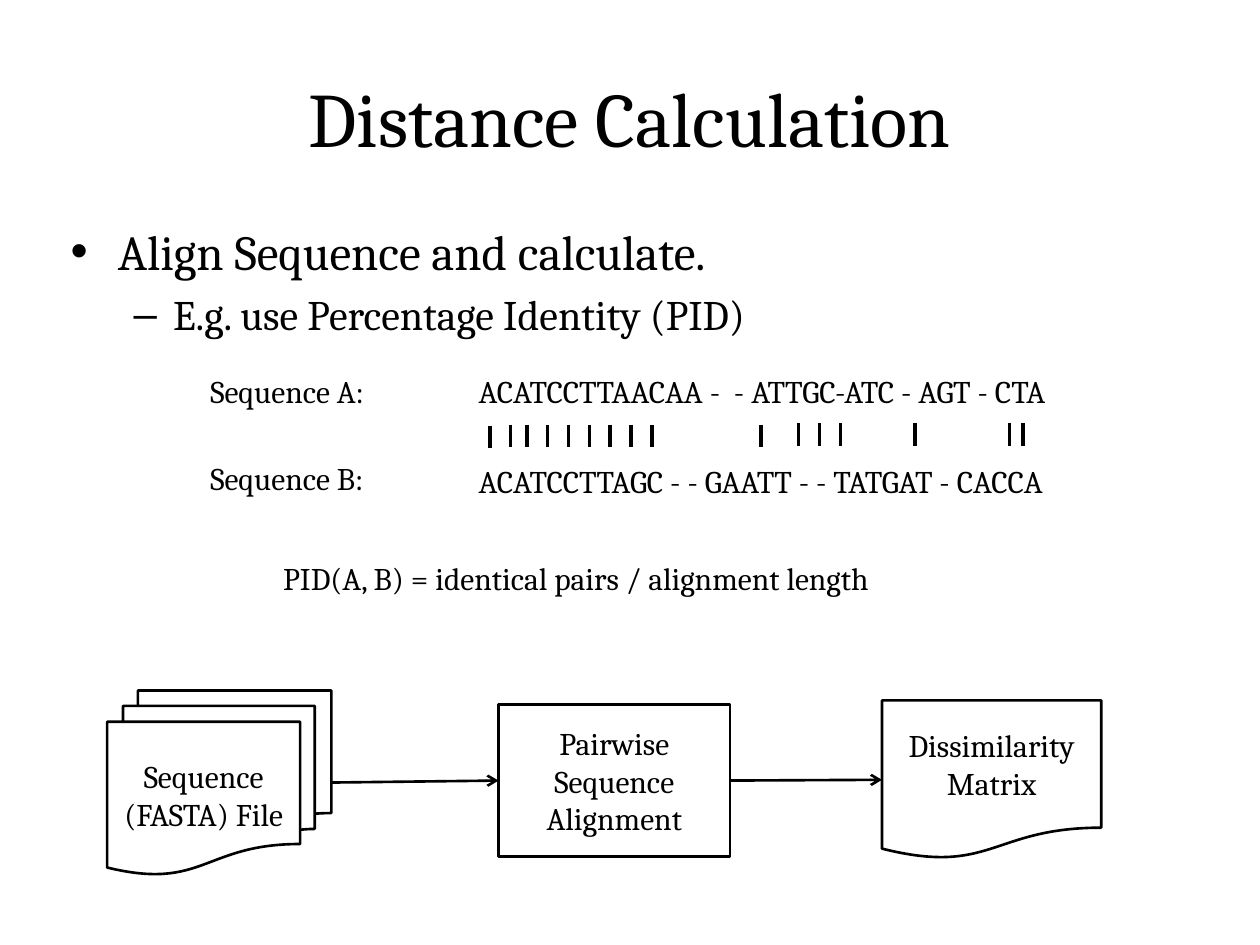
from lxml import etree
from pptx import Presentation
from pptx import util as u
from pptx.dml.color import RGBColor
from pptx.enum import shapes, text
from pptx.oxml import ns

FONT = "Cambria"
HUES = {"ink": "000000", "page": "FFFFFF"}
MARK = 0.46  # length of a match mark, cm
STEP = 0.42  # gap between neighbouring match marks, cm

# first x, top y, count of each run of matching letters, cm
RUNS = [
    (9.88, 8.58, 1), (10.29, 8.56, 1), (10.62, 8.56, 7), (15.34, 8.56, 1),
    (16.1, 8.53, 3), (18.44, 8.53, 1), (20.35, 8.53, 1), (20.62, 8.53, 1),
]

# left, top, width, words, cm
LABELS = [
    (3.99, 7.37, 4.7, "Sequence A:"),
    (3.99, 9.12, 4.7, "Sequence B:"),
    (9.4, 7.37, 13.56, "ACATCCTTAACAA -  - ATTGC-ATC - AGT - CTA"),
    (9.4, 9.19, 13.56, "ACATCCTTAGC - - GAATT - - TATGAT - CACCA"),
    (5.46, 11.15, 13.21, "PID(A, B) = identical pairs / alignment length"),
]

# preset, box, words, cm
STAGES = [
    (shapes.MSO_SHAPE.FLOWCHART_MULTIDOCUMENT, (2.16, 13.92, 4.52, 3.71),
     "Sequence (FASTA) File"),
    (shapes.MSO_SHAPE.FLOWCHART_PROCESS, (10.05, 14.2, 4.67, 3.07),
     "Pairwise Sequence Alignment"),
    (shapes.MSO_SHAPE.FLOWCHART_DOCUMENT, (17.78, 14.12, 4.42, 3.2),
     "Dissimilarity Matrix"),
]


def hue(name):
    return RGBColor.from_string(HUES[name])


def style(para, size, align=None):
    para.font.name = FONT
    para.font.size = u.Pt(size)
    para.font.color.rgb = hue("ink")
    para.alignment = align


def place(item, *box):
    item.left, item.top, item.width, item.height = map(u.Cm, box)


def add_head(slide):
    title = slide.shapes.title
    place(title, 1.27, 0.76, 22.86, 3.18)
    title.text_frame.text = "Distance Calculation"
    style(title.text_frame.paragraphs[0], 44, text.PP_ALIGN.CENTER)


def add_list(slide):
    body = slide.placeholders[1]
    place(body, 1.17, 4.34, 22.86, 12.57)
    frame = body.text_frame
    frame.text = "Align Sequence and calculate."
    style(frame.paragraphs[0], 28)
    sub = frame.add_paragraph()
    sub.text = "E.g. use Percentage Identity (PID)"
    sub.level = 1
    style(sub, 24)


def add_label(slide, left, top, width, words):
    box = slide.shapes.add_textbox(*map(u.Cm, (left, top, width, 1.02)))
    frame = box.text_frame
    frame.word_wrap = True
    frame.auto_size = text.MSO_AUTO_SIZE.SHAPE_TO_FIT_TEXT
    frame.text = words
    style(frame.paragraphs[0], 18)


def add_stage(slide, kind, box, words):
    stage = slide.shapes.add_shape(kind, *map(u.Cm, box))
    stage.shadow.inherit = False
    stage.fill.background()
    stage.line.color.rgb = hue("ink")
    stage.line.width = u.Pt(1.5)
    frame = stage.text_frame
    frame.word_wrap = True
    frame.vertical_anchor = text.MSO_ANCHOR.MIDDLE
    frame.text = words
    style(frame.paragraphs[0], 18, text.PP_ALIGN.CENTER)
    return stage


def add_line(slide, ends, width):
    line = slide.shapes.add_connector(
        shapes.MSO_CONNECTOR.STRAIGHT, *map(u.Cm, ends))
    line.line.color.rgb = hue("ink")
    line.line.width = u.Pt(width)
    etree.SubElement(line._element.spPr, ns.qn("a:effectLst"))
    return line


def add_marks(slide):
    """Draw one upright mark for each pair of identical letters."""
    for first, top, count in RUNS:
        for i in range(count):
            x = first + i * STEP
            add_line(slide, (x, top, x, top + MARK), 2)


def add_arrow(slide, start, end):
    """Join the right side of one stage to the left side of the next."""
    arrow = add_line(slide, (0, 0, 0, 0), 1.5)
    arrow.begin_connect(start, 3)
    arrow.end_connect(end, 1)
    etree.SubElement(arrow.line._get_or_add_ln(), ns.qn("a:tailEnd"),
                     type="arrow")


def main():
    deck = Presentation()
    deck.slide_width, deck.slide_height = u.Cm(25.4), u.Cm(19.05)
    slide = deck.slides.add_slide(deck.slide_layouts[1])
    slide.background.fill.solid()
    slide.background.fill.fore_color.rgb = hue("page")
    add_head(slide)
    add_list(slide)
    for label in LABELS:
        add_label(slide, *label)
    add_marks(slide)
    flow = [add_stage(slide, *stage) for stage in STAGES]
    for start, end in zip(flow, flow[1:]):
        add_arrow(slide, start, end)
    deck.save("out.pptx")


if __name__ == "__main__":
    main()
